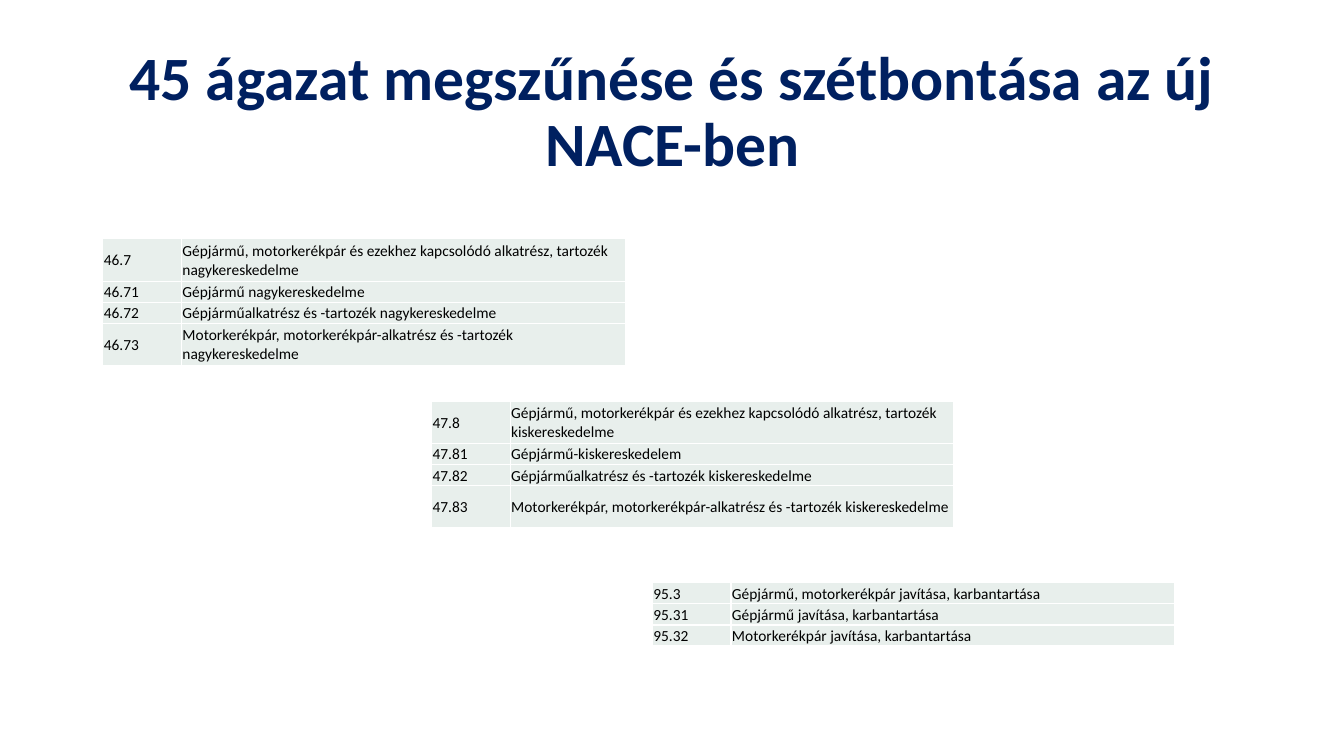
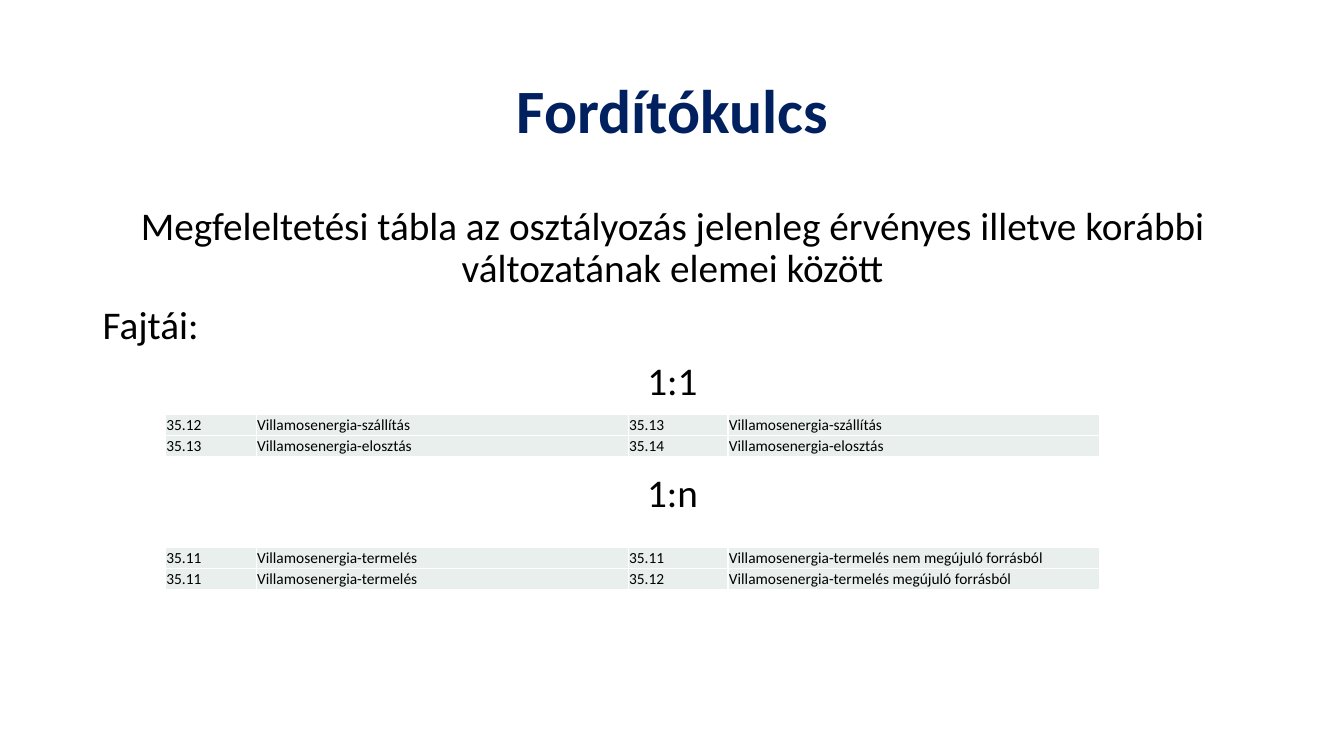
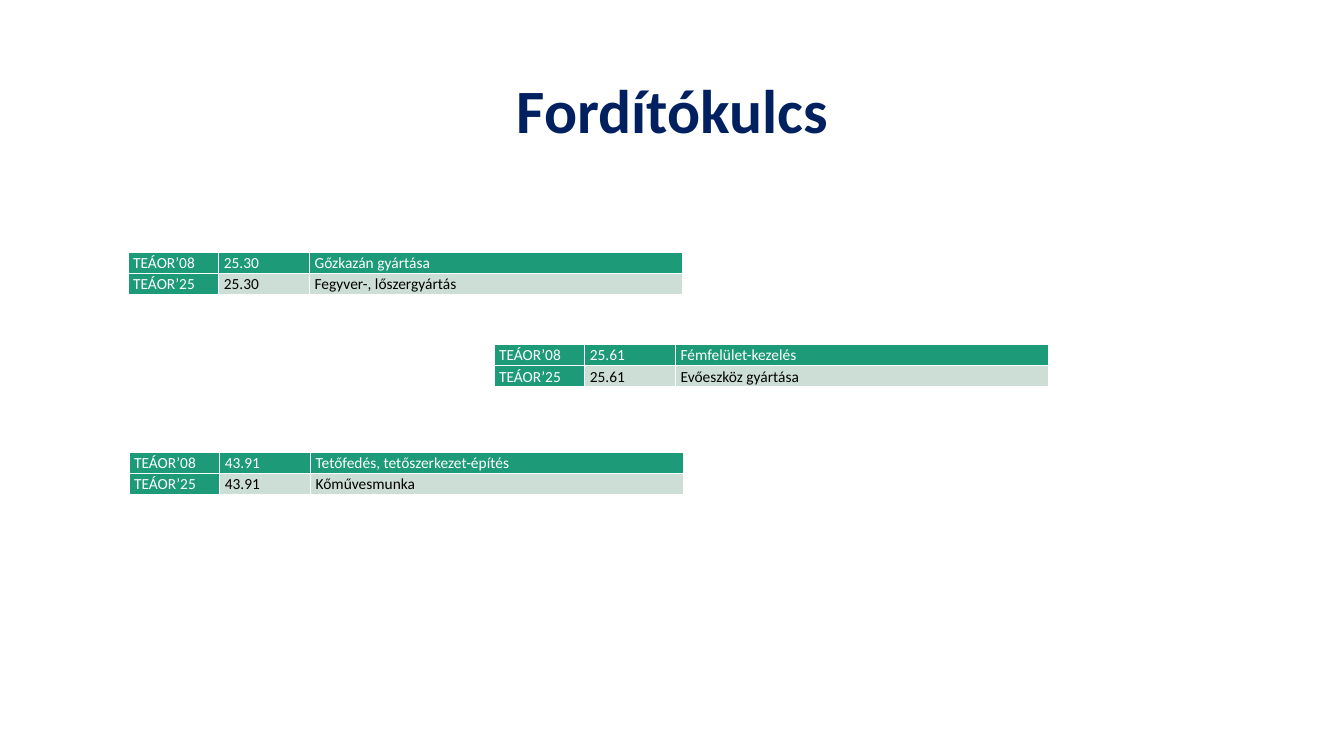
"""Build three slides on the new NACE classification and its conversion key."""
from dataclasses import dataclass

from lxml.etree import SubElement
from pptx import Presentation
from pptx.dml.color import RGBColor
from pptx.enum.text import MSO_ANCHOR, MSO_AUTO_SIZE, PP_ALIGN
from pptx.oxml.ns import qn
from pptx.util import Inches, Pt

FONT = "Calibri"
NAVY, BLACK, WHITE = "002060", "000000", "FFFFFF"
GREEN, SAGE, PALE = "1D9A78", "CDDED6", "E8EFEC"
ROW_H = 0.21
LEFT, WIDTH = 0.92, 11.5


@dataclass(frozen=True)
class TableStyle:
    """Look of one kind of table."""
    cols: tuple[float, ...]
    margins: tuple[float, float, float, float]
    anchor: MSO_ANCHOR = MSO_ANCHOR.TOP
    spacing: float = 1.0
    fill: str = PALE
    headed: bool = False


@dataclass(frozen=True)
class Table:
    """Place and content of one table; tall rows have double height."""
    left: float
    top: float
    rows: tuple[tuple[str, ...], ...]
    tall: tuple[int, ...] = ()


TIGHT = (0.01, 0.01, 0.01, 0)
CODES = TableStyle((0.78, 4.4), TIGHT, MSO_ANCHOR.MIDDLE)
PAIRS = TableStyle((0.9, 3.69, 0.99, 3.69), TIGHT)
VERSIONS = TableStyle((0.9, 0.9, 3.7), (0.05, 0, 0.05, 0), spacing=1.07, fill=SAGE, headed=True)

CODE_TABLES = (
    Table(1.02, 2.37, (
        ("46.7", "Gépjármű, motorkerékpár és ezekhez kapcsolódó alkatrész, tartozék nagykereskedelme"),
        ("46.71", "Gépjármű nagykereskedelme"),
        ("46.72", "Gépjárműalkatrész és -tartozék nagykereskedelme"),
        ("46.73", "Motorkerékpár, motorkerékpár-alkatrész és -tartozék nagykereskedelme"),
    ), (0, 3)),
    Table(4.28, 3.98, (
        ("47.8", "Gépjármű, motorkerékpár és ezekhez kapcsolódó alkatrész, tartozék kiskereskedelme"),
        ("47.81", "Gépjármű-kiskereskedelem"),
        ("47.82", "Gépjárműalkatrész és -tartozék kiskereskedelme"),
        ("47.83", "Motorkerékpár, motorkerékpár-alkatrész és -tartozék kiskereskedelme"),
    ), (0, 3)),
    Table(6.47, 5.78, (
        ("95.3", "Gépjármű, motorkerékpár javítása, karbantartása"),
        ("95.31", "Gépjármű javítása, karbantartása"),
        ("95.32", "Motorkerékpár javítása, karbantartása"),
    )),
)
PAIR_TABLES = (
    Table(1.64, 4.11, (
        ("35.12", "Villamosenergia-szállítás", "35.13", "Villamosenergia-szállítás"),
        ("35.13", "Villamosenergia-elosztás", "35.14", "Villamosenergia-elosztás"),
    )),
    Table(1.64, 5.43, (
        ("35.11", "Villamosenergia-termelés", "35.11", "Villamosenergia-termelés nem megújuló forrásból"),
        ("35.11", "Villamosenergia-termelés", "35.12", "Villamosenergia-termelés megújuló forrásból"),
    )),
)
VERSION_TABLES = tuple(
    Table(left, top, (("TEÁOR’08", code, old), ("TEÁOR’25", code, new)))
    for left, top, code, old, new in (
        (1.27, 2.5, "25.30", "Gőzkazán gyártása", "Fegyver-, lőszergyártás"),
        (4.9, 3.42, "25.61", "Fémfelület-kezelés", "Evőeszköz gyártása"),
        (1.28, 4.49, "43.91", "Tetőfedés, tetőszerkezet-építés", "Kőművesmunka"),
    )
)
BODY = (
    ("Megfeleltetési tábla az osztályozás jelenleg érvényes illetve korábbi "
     "változatának elemei között", PP_ALIGN.CENTER, 0),
    ("Fajtái:", PP_ALIGN.LEFT, 10),
    ("1:1", PP_ALIGN.CENTER, 10),
    ("1:n", PP_ALIGN.CENTER, 50),
)


def rgb(color: str) -> RGBColor:
    """Turn a hex string into a colour."""
    return RGBColor.from_string(color)


def style_text(p, size: float, color: str, bold: bool = False, spacing: float = 0.9) -> None:
    """Format the runs and line spacing of a paragraph."""
    p.line_spacing = spacing
    for r in p.runs:
        r.font.name, r.font.size, r.font.bold = FONT, Pt(size), bold
        r.font.color.rgb = rgb(color)


def add_slide(prs, title: str):
    """Add a title-only slide with the shared title style."""
    s = prs.slides.add_slide(prs.slide_layouts[5])
    sp = s.shapes.title
    sp.left, sp.top, sp.width, sp.height = map(Inches, (LEFT, 0.4, WIDTH, 1.45))
    tf = sp.text_frame
    tf.text = title
    tf.auto_size = MSO_AUTO_SIZE.NONE
    tf.vertical_anchor = MSO_ANCHOR.MIDDLE
    p = tf.paragraphs[0]
    p.alignment = PP_ALIGN.CENTER
    style_text(p, 44, NAVY, bold=True)
    return s


def add_body(s) -> None:
    """Add the explanatory text."""
    tf = s.shapes.add_textbox(*map(Inches, (LEFT, 2, WIDTH, 4.76))).text_frame
    tf.word_wrap = True
    tf.text = "\n".join(text for text, _, _ in BODY)
    for p, (_, align, before) in zip(tf.paragraphs, BODY):
        p.alignment = align
        p.space_before = Pt(before)
        style_text(p, 28, BLACK)


def add_borders(cell) -> None:
    """Draw thin white borders around a cell."""
    tc_pr = cell._tc.get_or_add_tcPr()
    for side in ("lnL", "lnR", "lnT", "lnB"):
        ln = SubElement(tc_pr, qn(f"a:{side}"), w=str(Pt(1)))
        SubElement(SubElement(ln, qn("a:solidFill")), qn("a:srgbClr"), val=WHITE)


def style_cell(cell, text: str, style: TableStyle, header: bool) -> None:
    """Fill one cell with text in the table's style."""
    add_borders(cell)
    cell.fill.solid()
    cell.fill.fore_color.rgb = rgb(GREEN if header else style.fill)
    cell.margin_left, cell.margin_top, cell.margin_right, cell.margin_bottom = map(Inches, style.margins)
    cell.vertical_anchor = style.anchor
    cell.text_frame.text = text
    style_text(cell.text_frame.paragraphs[0], 11, WHITE if header else BLACK, spacing=style.spacing)


def add_table(s, table: Table, style: TableStyle) -> None:
    """Add one table to a slide."""
    heights = [ROW_H * (2 if i in table.tall else 1) for i in range(len(table.rows))]
    box = map(Inches, (table.left, table.top, sum(style.cols), sum(heights)))
    tbl = s.shapes.add_table(len(heights), len(style.cols), *box).table
    tbl.first_row = tbl.first_col = style.headed
    tbl.horz_banding = False
    for col, width in zip(tbl.columns, style.cols):
        col.width = Inches(width)
    for i, (row, height, texts) in enumerate(zip(tbl.rows, heights, table.rows)):
        row.height = Inches(height)
        for j, (cell, text) in enumerate(zip(row.cells, texts)):
            style_cell(cell, text, style, style.headed and 0 in (i, j))


def main() -> None:
    """Build and save the presentation."""
    prs = Presentation()
    prs.slide_width, prs.slide_height = Inches(13.33), Inches(7.5)
    for title, style, tables in (
        ("45 ágazat megszűnése és szétbontása az új NACE-ben", CODES, CODE_TABLES),
        ("Fordítókulcs", PAIRS, PAIR_TABLES),
        ("Fordítókulcs", VERSIONS, VERSION_TABLES),
    ):
        s = add_slide(prs, title)
        if style is PAIRS:
            add_body(s)
        for table in tables:
            add_table(s, table, style)
    prs.save("out.pptx")


if __name__ == "__main__":
    main()
